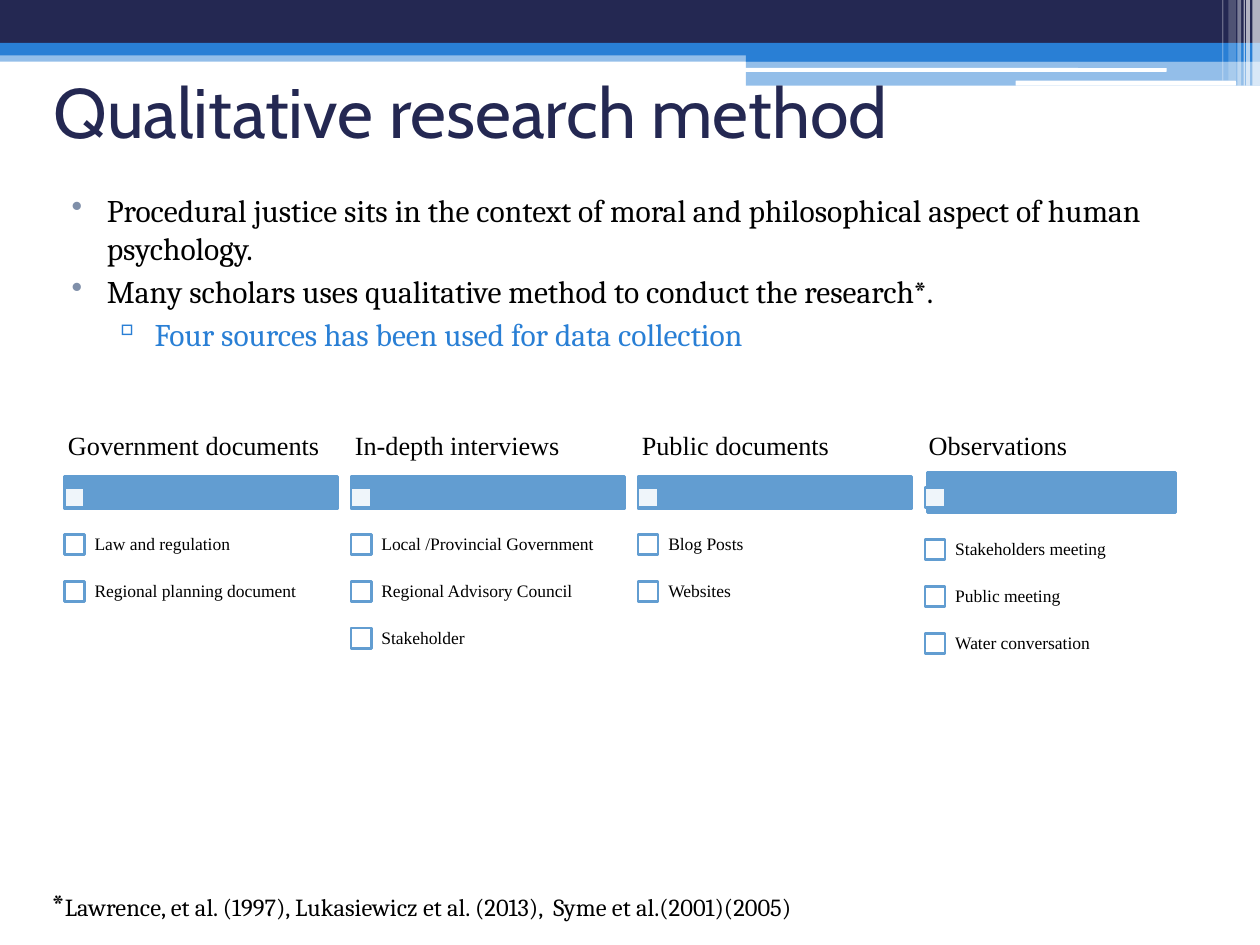
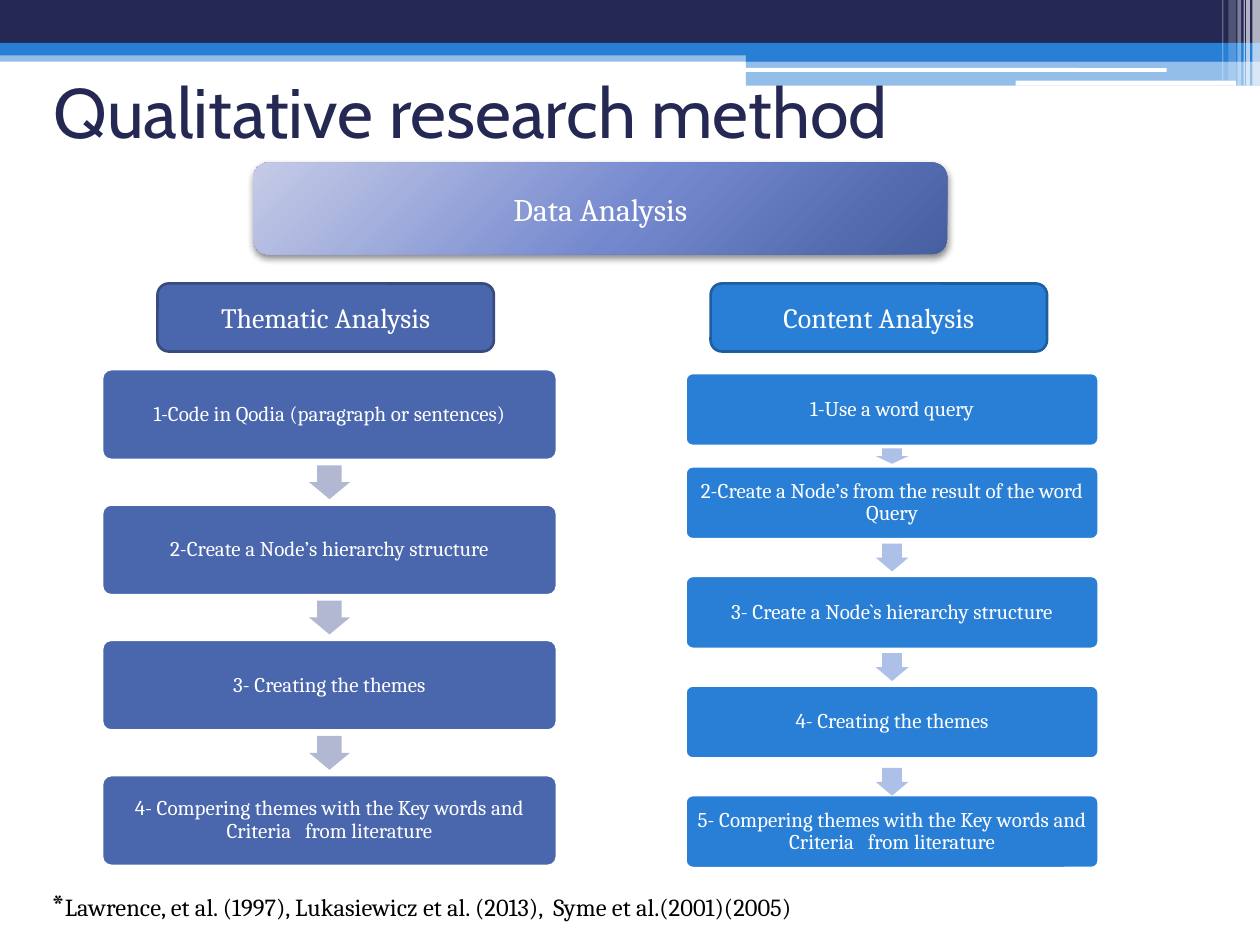
"""Build two slides on a qualitative research method: data sources and data analysis."""
from dataclasses import dataclass

from lxml.etree import SubElement
from pptx import Presentation
from pptx.dml.color import RGBColor
from pptx.enum.shapes import MSO_SHAPE
from pptx.enum.text import MSO_ANCHOR, PP_ALIGN
from pptx.oxml import parse_xml
from pptx.oxml.ns import nsdecls, qn
from pptx.util import Inches, Pt

TITLE = "Qualitative research method"
FOOTNOTE = [("*", 18), ("Lawrence, et al. (1997), Lukasiewicz et al. (2013),  Syme et al.(2001)(2005)", 14)]
POINTS = [
    (0, "Procedural justice sits in the context of moral and philosophical aspect of human psychology."),
    (0, "Many scholars uses qualitative method to conduct the research*."),
    (1, "Four sources has been used for data collection"),
]
SOURCES = [
    ("Government documents", ["Law and regulation", "Regional planning document"]),
    ("In-depth interviews", ["Local /Provincial Government", "Regional Advisory Council", "Stakeholder"]),
    ("Public documents", ["Blog Posts", "Websites"]),
    ("Observations", ["Stakeholders meeting", "Public meeting", "Water conversation"]),
]
ANALYSIS = "Data Analysis"
THEMATIC = ("Thematic Analysis", [
    "1-Code in Qodia (paragraph or sentences)",
    "2-Create a Node’s hierarchy structure",
    "3- Creating the themes",
    "4- Compering themes with the Key words and Criteria   from literature",
])
CONTENT = ("Content Analysis", [
    "1-Use a word query",
    "2-Create a Node’s from the result of the word Query",
    "3- Create a Node`s hierarchy structure",
    "4- Creating the themes",
    "5- Compering themes with the Key words and Criteria   from literature",
])


@dataclass(frozen=True)
class Theme:
    """Colours, fonts and type sizes."""
    navy: str = "242852"
    blue: str = "297FD5"
    blue_edge: str = "1E5E9E"
    blue_arrow: str = "ADC0E7"
    indigo: str = "4A66AC"
    indigo_edge: str = "374B7F"
    indigo_arrow: str = "B2B8D2"
    sky: str = "629DD1"
    grey: str = "7F8FA9"
    white: str = "FFFFFF"
    black: str = "000000"
    glow: tuple = ((0, "C5CBE7"), (55, "7488CE"), (100, "455FA0"))
    head: str = "Cabin"
    body: str = "Cambria"
    list: str = "Times New Roman"
    title_pt: int = 40
    body_pt: int = 18
    branch_pt: int = 16
    source_pt: int = 15
    step_pt: int = 12
    item_pt: int = 10


T = Theme()
COLS, ROWS = 100, 75
CELL = Inches(10) / COLS
RECT, ROUND, DOWN = MSO_SHAPE.RECTANGLE, MSO_SHAPE.ROUNDED_RECTANGLE, MSO_SHAPE.DOWN_ARROW

BANDS = [
    (RECT, (0, 4, COLS, 0.9), T.blue, 50),
    (RECT, (0, 0, COLS, 3.4), T.navy, 100),
    (RECT, (0, 3.4, COLS, 1), T.blue, 100),
    (RECT, (59.2, 3.9, 40.8, 1), T.blue, 100),
    (RECT, (59.2, 4.8, 40.8, 2), T.blue, 50),
    (ROUND, (59.1, 5.4, 33.5, 0.3), T.white, 100),
    (ROUND, (80.6, 6.4, 17.5, 0.4), T.white, 100),
]
STRIPES = [(99.4, 0.6, 6.8, 65), (98.9, 0.3, 6.8, 65), (98.7, 0.1, 6.8, 60),
           (98.2, 0.3, 6.8, 40), (97.5, 0.6, 6.4, 20), (97, 0.1, 6.4, 30)]


def grid(*cells):
    return [int(c * CELL) for c in cells]


def shape(s, kind, at, fill, alpha=100, line=None, adj=()):
    sp = s.shapes.add_shape(kind, *grid(*at))
    sp.shadow.inherit = False
    for i, value in enumerate(adj):
        sp.adjustments[i] = value
    sp.fill.solid()
    sp.fill.fore_color.rgb = RGBColor.from_string(fill)
    if alpha < 100:
        clr = sp._element.spPr.find(qn("a:solidFill"))[0]
        SubElement(clr, qn("a:alpha"), val=str(alpha * 1000))
    if line:
        sp.line.color.rgb = RGBColor.from_string(line)
        sp.line.width = Pt(1.5)
    else:
        sp.line.fill.background()
    return sp


def frame(sp, anchor=MSO_ANCHOR.MIDDLE, inset=(1, 0.5)):
    tf = sp.text_frame
    tf.word_wrap = True
    tf.vertical_anchor = anchor
    tf.margin_left = tf.margin_right = grid(inset[0])[0]
    tf.margin_top = tf.margin_bottom = grid(inset[1])[0]
    return tf


def run(p, text, size, font, color):
    r = p.add_run()
    r.text = text
    r.font.size = Pt(size)
    r.font.name = font
    r.font.color.rgb = RGBColor.from_string(color)


def label(sp, text, size, font=T.body, color=T.white, align=PP_ALIGN.CENTER, spacing=1.0, inset=(1, 0.5)):
    p = frame(sp, inset=inset).paragraphs[0]
    p.alignment = align
    p.line_spacing = spacing
    run(p, text, size, font, color)


def textbox(s, at, text, size, font, color, **style):
    label(s.shapes.add_textbox(*grid(*at)), text, size, font, color, PP_ALIGN.LEFT, **style)


def bullet(p, char, color, margin, hang):
    pPr = p._p.get_or_add_pPr()
    left, back = grid(margin, hang)
    pPr.set("marL", str(left))
    pPr.set("indent", str(-back))
    clr = SubElement(pPr, qn("a:buClr"))
    SubElement(clr, qn("a:srgbClr"), val=color)
    SubElement(pPr, qn("a:buChar"), char=char)


def base_slide(prs):
    s = prs.slides.add_slide(prs.slide_layouts[6])
    for kind, at, color, alpha in BANDS:
        shape(s, kind, at, color, alpha)
    for x, w, h, alpha in STRIPES:
        shape(s, RECT, (x, 0, w, h), T.white, alpha)
    textbox(s, (3.3, 2.9, 90, 11.7), TITLE, T.title_pt, T.head, T.navy)
    note = shape(s, ROUND, (2.8, 68.6, 90.6, 6.3), T.white)
    p = frame(note).paragraphs[0]
    p.alignment = PP_ALIGN.LEFT
    for text, size in FOOTNOTE:
        run(p, text, size, T.body, T.black)
    return s


def points(s):
    levels = [("•", T.grey, T.black, 4, 2.8), ("▫", T.blue, T.blue, 7.8, 3.3)]
    tf = frame(s.shapes.add_textbox(*grid(3.5, 14.7, 90, 15)), MSO_ANCHOR.TOP)
    for i, (level, text) in enumerate(POINTS):
        char, mark, color, margin, hang = levels[level]
        p = tf.add_paragraph() if i else tf.paragraphs[0]
        p.space_before = Pt(3)
        bullet(p, char, mark, margin, hang)
        run(p, text, T.body_pt, T.body, color)


def sources(s):
    left, pitch, width, box, row = 5.1, 22.77, 21.7, 1.6, 3.73
    for col, (name, items) in enumerate(SOURCES):
        x = left + col * pitch
        last = col == len(SOURCES) - 1
        bar = (x + 0.2, 37.5, 19.7, 3.2) if last else (x, 37.8, width, 2.6)
        top = 42.8 if last else 42.4
        shape(s, RECT, bar, T.sky, line=T.sky)
        shape(s, RECT, (x, 38.7, box, box), T.white, 90, T.sky)
        textbox(s, (x, 33.2, width, 4.6), name, T.source_pt, T.list, T.black, spacing=0.9, inset=(0.3, 0.2))
        for i, item in enumerate(items):
            y = top + i * row
            shape(s, RECT, (x, y, box, box), T.white, line=T.sky)
            textbox(s, (x + box, y - 1.05, width - box, row), item, T.item_pt, T.list, T.black,
                    spacing=0.9, inset=(0.8, 0.8))


def steps(s, texts, x, width, height, tops, fill, arrow, nudges):
    for i, (text, y) in enumerate(zip(texts, tops)):
        card = shape(s, ROUND, (x, y, width, height), fill, line=T.white, adj=[0.1])
        label(card, text, T.step_pt, spacing=0.9, inset=(0.5, 0.5))
    for y, below, nudge in zip(tops, tops[1:], nudges):
        gap = below - y - height
        w, h = 0.45 * height, 0.76 * gap
        at = (x + (width - w) / 2, y + height + (gap - h) / 2 + nudge, w, h)
        shape(s, DOWN, at, arrow, adj=[0.6, 0.5])


def analysis_banner(s):
    sp = shape(s, ROUND, (20.1, 12.9, 55.1, 7.3), T.indigo)
    label(sp, ANALYSIS, T.body_pt)
    stops = "".join(f'<a:gs pos="{pos * 1000}"><a:srgbClr val="{c}"/></a:gs>' for pos, c in T.glow)
    spPr = sp._element.spPr
    spPr.replace(spPr.find(qn("a:solidFill")), parse_xml(
        f'<a:gradFill {nsdecls("a")} rotWithShape="1"><a:gsLst>{stops}</a:gsLst><a:path path="circle">'
        '<a:fillToRect l="-40000" t="-90000" r="140000" b="190000"/></a:path></a:gradFill>'))
    spPr.replace(spPr.find(qn("a:effectLst")), parse_xml(
        f'<a:effectLst {nsdecls("a")}><a:outerShdw blurRad="{Pt(4)}" dist="{Pt(2)}" dir="5400000" '
        f'rotWithShape="0"><a:srgbClr val="{T.black}"><a:alpha val="45000"/></a:srgbClr>'
        '</a:outerShdw></a:effectLst>'))


def branch(s, x, name, fill, edge):
    label(shape(s, ROUND, (x, 22.5, 26.7, 5.4), fill, line=edge), name, T.branch_pt)


def main():
    prs = Presentation()
    prs.slide_width, prs.slide_height = grid(COLS, ROWS)

    s = base_slide(prs)
    points(s)
    sources(s)

    s = base_slide(prs)
    name, texts = THEMATIC
    tops = [29.3 + i * 10.74 for i in range(len(texts))]
    steps(s, texts, 8.1, 36.1, 7.2, tops, T.indigo, T.indigo_arrow, [0, 0, 0])
    branch(s, 12.5, name, T.indigo, T.indigo_edge)

    name, texts = CONTENT
    tops = [29.6] + [37 + i * 8.7 for i in range(len(texts) - 1)]
    steps(s, texts, 54.4, 32.8, 5.8, tops, T.blue, T.blue_arrow, [0, 0, 0, 0.4])
    branch(s, 56.4, name, T.blue, T.blue_edge)
    analysis_banner(s)

    prs.save("out.pptx")


if __name__ == "__main__":
    main()
